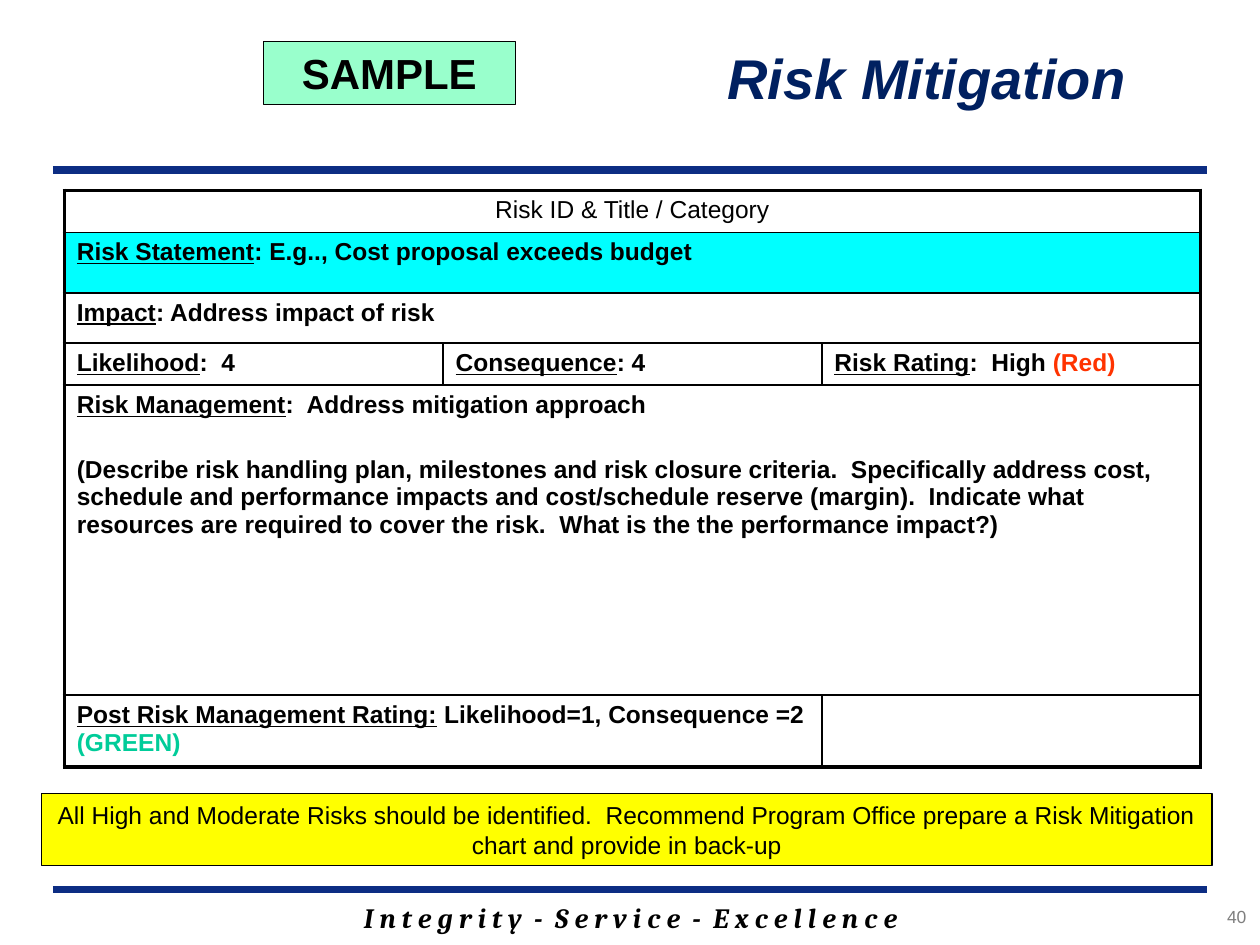
"""Build the sample risk mitigation slide."""
import pptx
import pptx.dml.color
import pptx.enum.shapes
import pptx.enum.text
import pptx.oxml.ns
import pptx.util
from lxml import etree

RGBColor = pptx.dml.color.RGBColor
Pt = pptx.util.Pt
Align = pptx.enum.text.PP_ALIGN
Anchor = pptx.enum.text.MSO_ANCHOR
qn = pptx.oxml.ns.qn

BLACK = RGBColor(0x00, 0x00, 0x00)
NAVY = RGBColor(0x00, 0x20, 0x60)
RULE_BLUE = RGBColor(0x0C, 0x2D, 0x83)
CYAN = RGBColor(0x00, 0xFF, 0xFF)
YELLOW = RGBColor(0xFF, 0xFF, 0x00)
MINT = RGBColor(0x99, 0xFF, 0xCC)
RED = RGBColor(0xFF, 0x33, 0x00)
GREEN = RGBColor(0x00, 0xCC, 0x99)
GREY = RGBColor(0x7F, 0x7F, 0x7F)

GRID_COLUMNS, GRID_ROWS = 100, 75
THICK, THIN = 2.25, 1


def write(frame, paragraphs, size=14, color=BLACK, bold=False, italic=False,
          align=Align.LEFT, font="Arial", gap=0, wrap=True, anchor=Anchor.TOP):
    """Fill a frame with paragraphs, each a list of (text, underlined, colour) runs."""
    frame.word_wrap = wrap
    frame.vertical_anchor = anchor
    for index, runs in enumerate(paragraphs):
        paragraph = frame.add_paragraph() if index else frame.paragraphs[0]
        paragraph.alignment = align
        if index:
            paragraph.space_before = Pt(gap)
        for text, underlined, run_color in runs:
            run = paragraph.add_run()
            run.text = text
            run.font.name, run.font.size = font, Pt(size)
            run.font.bold, run.font.italic = bold, italic
            run.font.underline = underlined
            run.font.color.rgb = run_color or color


def plain(text):
    """Return one paragraph of one plain run."""
    return [[(text, False, None)]]


def labelled(label, detail, rating="", rating_color=None):
    """Return a paragraph with an underlined label and an optional coloured rating."""
    runs = [(label, True, None), (detail, False, None)]
    return runs + [(rating, False, rating_color)] if rating else runs


def draw_border(cell, side, width):
    """Draw one side of a cell, or hide it when the width is zero."""
    line = etree.SubElement(cell._tc.get_or_add_tcPr(), qn(f"a:ln{side}"), w=str(Pt(width)))
    if width:
        fill = etree.SubElement(line, qn("a:solidFill"))
        etree.SubElement(fill, qn("a:srgbClr"), val=str(BLACK))
    else:
        etree.SubElement(line, qn("a:noFill"))


class RiskSlide:
    """Hold the grid and the current slide."""

    def __init__(self, deck):
        self.column = deck.slide_width / GRID_COLUMNS
        self.row = deck.slide_height / GRID_ROWS
        self.slide = deck.slides.add_slide(deck.slide_layouts[5])
        self.shapes = self.slide.shapes

    def area(self, left, top, width, height):
        """Turn grid columns and rows into lengths."""
        return (round(left * self.column), round(top * self.row),
                round(width * self.column), round(height * self.row))

    def title(self, area, text, **style):
        """Place and format the title placeholder."""
        heading = self.shapes.title
        heading.left, heading.top, heading.width, heading.height = self.area(*area)
        write(heading.text_frame, plain(text), **style)

    def label(self, area, text, **style):
        """Add a text box."""
        write(self.shapes.add_textbox(*self.area(*area)).text_frame, plain(text), **style)

    def banner(self, area, text, fill, **style):
        """Add an outlined rectangle with centred text."""
        box = self.shapes.add_shape(pptx.enum.shapes.MSO_SHAPE.RECTANGLE, *self.area(*area))
        box.shadow.inherit = False
        box.fill.solid()
        box.fill.fore_color.rgb = fill
        box.line.color.rgb, box.line.width = BLACK, Pt(0.75)
        write(box.text_frame, plain(text), align=Align.CENTER, anchor=Anchor.MIDDLE, **style)

    def rule(self, top, margin=4.2):
        """Add a horizontal rule between equal side margins."""
        left, y, right, _ = self.area(margin, top, GRID_COLUMNS - margin, 0)
        line = self.shapes.add_connector(
            pptx.enum.shapes.MSO_CONNECTOR.STRAIGHT, left, y, right, y)
        line.line.color.rgb, line.line.width = RULE_BLUE, Pt(4.5)
        etree.SubElement(line._element.spPr, qn("a:effectLst"))

    def risk_table(self, area, heights, rows, fills, open_edge):
        """Add a table whose rows list (span, paragraphs, format) entries."""
        columns = sum(span for span, _, _ in rows[0])
        table = self.shapes.add_table(len(rows), columns, *self.area(*area)).table
        table.first_row = table.horz_banding = False
        for r, entries in enumerate(rows):
            table.rows[r].height = round(heights[r] * self.row)
            first = 0
            for span, paragraphs, style in entries:
                last = first + span - 1
                widths = {
                    "L": THIN if first else THICK,
                    "R": THIN if last < columns - 1 else THICK,
                    "T": THIN if r else THICK,
                    "B": THIN if r < len(rows) - 1 else THICK,
                }
                if (r, first) == open_edge:
                    widths["T"] = 0
                if (r + 1, first) == open_edge or (r + 1 == open_edge[0] and span == columns):
                    widths["B"] = 0
                for c in range(first, last + 1):
                    cell = table.cell(r, c)
                    for side, width in widths.items():
                        draw_border(cell, side, width)
                    if r in fills:
                        cell.fill.solid()
                        cell.fill.fore_color.rgb = fills[r]
                    else:
                        cell.fill.background()
                origin = table.cell(r, first)
                if span > 1:
                    origin.merge(table.cell(r, last))
                write(origin.text_frame, paragraphs, **style)
                first = last + 1


def main():
    """Build and save the slide."""
    deck = pptx.Presentation()
    deck.slide_width, deck.slide_height = pptx.util.Inches(10), pptx.util.Inches(7.5)
    page = RiskSlide(deck)
    bold = {"bold": True}

    page.label((14.2, 71, 71.7, 3.7),
               "I n t e g r i t y  -  S e r v i c e  -  E x c e l l e n c e",
               size=16, font="Cambria", bold=True, italic=True, align=Align.CENTER)
    for top in (13.5, 70.6):
        page.rule(top)

    plan = ("(Describe risk handling plan, milestones and risk closure criteria.  "
            "Specifically address cost, schedule and performance impacts and cost/schedule "
            "reserve (margin).  Indicate what resources are required to cover the risk.  "
            "What is the the performance impact?)")
    rows = [
        [(3, plain("Risk ID & Title / Category"), {"align": Align.CENTER})],
        [(3, [labelled("Risk Statement", ": E.g.., Cost proposal exceeds budget")], bold)],
        [(3, [labelled("Impact", ": Address impact of risk")], bold)],
        [(1, [labelled("Likelihood", ":  4")], bold),
         (1, [labelled("Consequence", ": 4")], bold),
         (1, [labelled("Risk Rating", ":  High ", "(Red)", RED)], bold)],
        [(3, [labelled("Risk Management", ":  Address mitigation approach"),
              *plain(plan)], {"bold": True, "gap": 21})],
        [(2, [labelled("Post Risk Management Rating:", " Likelihood=1, Consequence =2 ",
                       "(GREEN)", GREEN)], bold),
         (1, [], {})],
    ]
    page.risk_table((5.1, 15.1, 90.2, 45.7), (3.3, 4.8, 4, 3.3, 24.6, 5.7),
                    rows, fills={1: CYAN}, open_edge=(5, 2))

    page.banner((3.3, 63, 92.9, 5.7),
                "All High and Moderate Risks should be identified.  Recommend Program Office "
                "prepare a Risk Mitigation chart and provide in back-up", YELLOW)
    page.title((56.6, 2.9, 33.9, 6.4), "Risk Mitigation", size=32, color=NAVY, bold=True,
               italic=True, align=Align.CENTER, wrap=False, anchor=Anchor.MIDDLE)
    page.banner((20.9, 3.3, 20, 5), "SAMPLE", MINT, size=24, bold=True)
    page.label((87.4, 71.4, 12.5, 3.3), "40", size=10, color=GREY, align=Align.RIGHT)
    deck.save("out.pptx")


if __name__ == "__main__":
    main()
